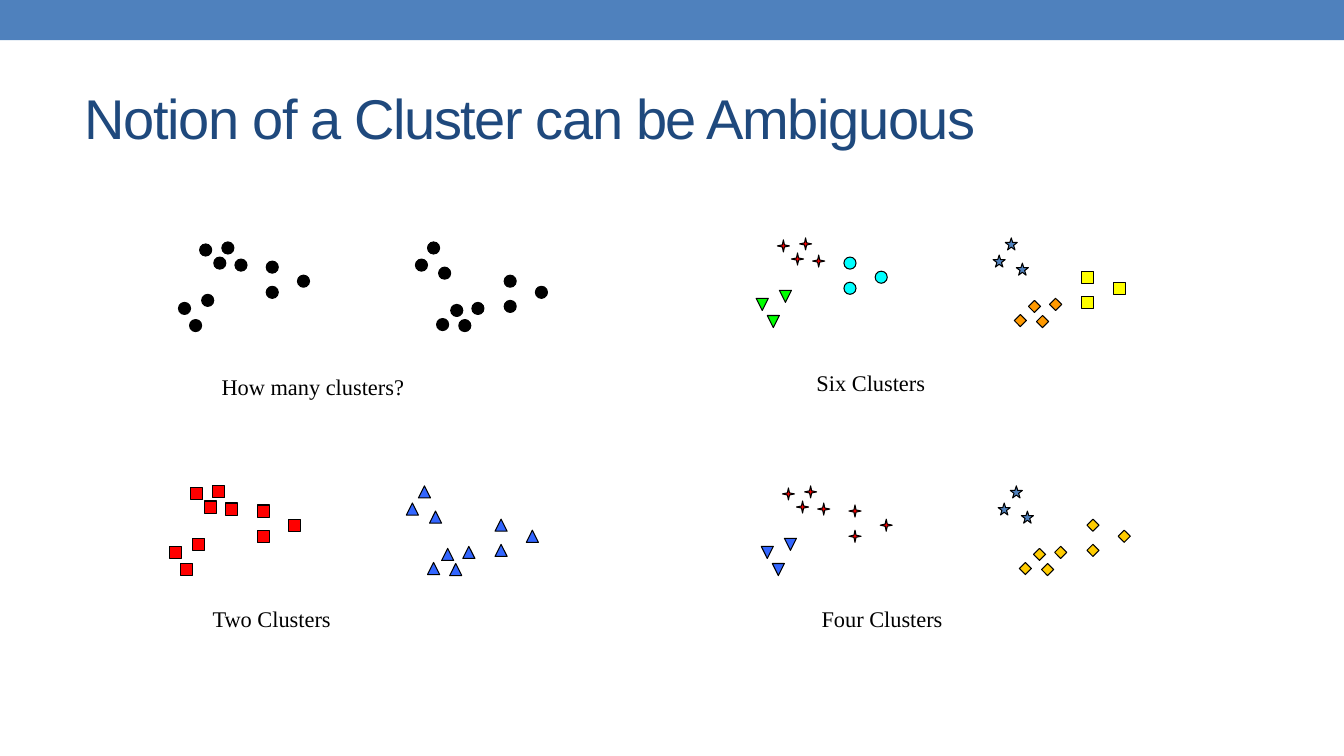
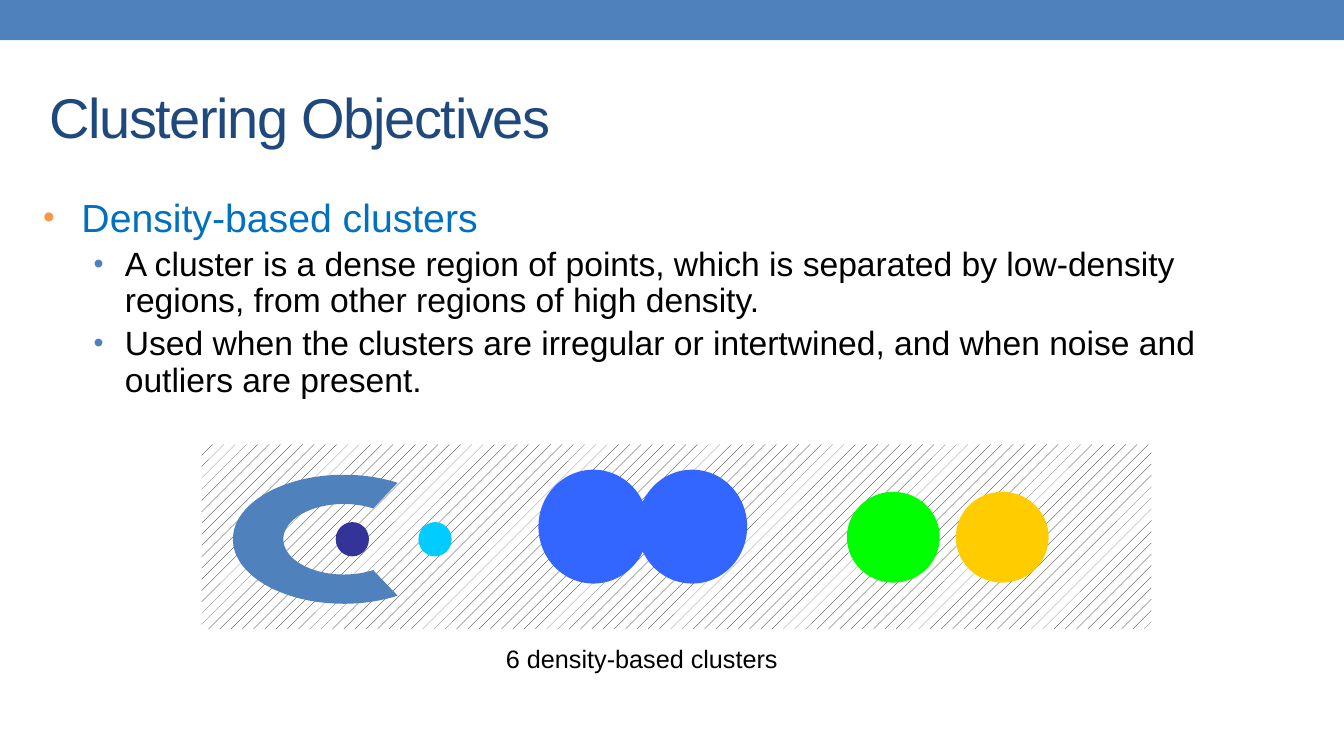
import math

import pptx
import pptx.dml.color
import pptx.enum.dml
import pptx.enum.shapes
import pptx.enum.text
import pptx.oxml.ns
import pptx.util
from lxml import etree

PX = 9144  # EMU per px, 100 px to the inch
SLIDE_WIDTH, SLIDE_HEIGHT = 1333, 750
TITLE_ONLY = 5
MARKER_SIZE = 12

RGB = pptx.dml.color.RGBColor
SHAPE = pptx.enum.shapes.MSO_SHAPE
qn = pptx.oxml.ns.qn

BLACK = RGB(0x00, 0x00, 0x00)
WHITE = RGB(0xFF, 0xFF, 0xFF)
STEEL = RGB(0x4F, 0x81, 0xBD)
NAVY = RGB(0x1F, 0x49, 0x7D)
HEADING = RGB(0x00, 0x70, 0xC0)
BULLET_ORANGE = RGB(0xF7, 0x96, 0x46)
RED = RGB(0xFF, 0x00, 0x00)
BLUE = RGB(0x33, 0x66, 0xFF)
GREEN = RGB(0x00, 0xFF, 0x00)
GOLD = RGB(0xFF, 0xCC, 0x00)
ORANGE = RGB(0xFF, 0x99, 0x00)
YELLOW = RGB(0xFF, 0xFF, 0x00)
CYAN = RGB(0x00, 0xFF, 0xFF)
SKY = RGB(0x00, 0xCC, 0xFF)
INDIGO = RGB(0x33, 0x33, 0x99)

# Marker positions of the point cloud, one row per neighbourhood.
NEIGHBOURHOODS = (
    ((233, 257), (198, 242), (220, 240), (212, 255)),
    ((200, 292), (177, 300), (188, 317)),
    ((264, 259), (295, 273), (264, 284)),
    ((435, 265), (412, 257), (424, 240)),
    ((468, 300), (433, 316), (455, 317), (447, 302)),
    ((500, 298), (531, 284), (500, 273)),
)

DOT = (SHAPE.OVAL, BLACK)
RED_SQUARE = (SHAPE.RECTANGLE, RED)
BLUE_TRIANGLE = (SHAPE.ISOSCELES_TRIANGLE, BLUE)
RED_SPARK = (SHAPE.STAR_4_POINT, RED)
STEEL_STAR = (SHAPE.STAR_5_POINT, STEEL)
GOLD_DIAMOND = (SHAPE.DIAMOND, GOLD)

# Caption, caption position, shift of the cloud, marker per neighbourhood.
PANELS = (
    ("How many clusters?", (210, 365), (0, 0), (DOT,) * 6),
    ("Four Clusters", (805, 595), (578, 242),
     (RED_SPARK, (SHAPE.FLOWCHART_MERGE, BLUE), RED_SPARK,
      STEEL_STAR, GOLD_DIAMOND, GOLD_DIAMOND)),
    ("Two Clusters", (201, 595), (-9, 242),
     (RED_SQUARE,) * 3 + (BLUE_TRIANGLE,) * 3),
    ("Six Clusters", (800, 361), (573, -4),
     (RED_SPARK, (SHAPE.FLOWCHART_MERGE, GREEN), (SHAPE.OVAL, CYAN),
      STEEL_STAR, (SHAPE.DIAMOND, ORANGE), (SHAPE.RECTANGLE, YELLOW))),
)

DENSITY_POINTS = (
    "A cluster is a dense region of points, which is separated by low-density "
    "regions, from other regions of high density.",
    "Used when the clusters are irregular or intertwined, and when noise and "
    "outliers are present.",
)


def emu(*lengths):
    return [pptx.util.Emu(round(length * PX)) for length in lengths]


class Deck:
    """Holds the shared style and the slide being built."""

    def __init__(self):
        self.presentation = pptx.Presentation()
        (self.presentation.slide_width,
         self.presentation.slide_height) = emu(SLIDE_WIDTH, SLIDE_HEIGHT)
        self.layout = self.presentation.slide_layouts[TITLE_ONLY]
        self.slide = None

    def start_slide(self, heading, box):
        first = self.slide is None
        self.slide = self.presentation.slides.add_slide(self.layout)
        if first:
            self.place_band()

        title = self.slide.shapes.title
        title.left, title.top, title.width, title.height = emu(*box)
        title.text_frame.word_wrap = True
        title.text_frame.vertical_anchor = pptx.enum.text.MSO_ANCHOR.MIDDLE
        paragraph = title.text_frame.paragraphs[0]
        paragraph.text = heading
        paragraph.alignment = pptx.enum.text.PP_ALIGN.LEFT
        self.style(paragraph, 40, NAVY)
        paragraph.runs[0]._r.get_or_add_rPr().set("spc", "-100")

    def place_band(self):
        """Put the top band on the layout, behind its placeholders."""
        band = self.shape(SHAPE.RECTANGLE, (0, 0, SLIDE_WIDTH, 40), STEEL)
        band.element.find(".//" + qn("p:cNvPr")).set("id", "20")
        self.layout.shapes.element.insert(2, band.element)

    def style(self, paragraph, size, color=BLACK, font="Arial"):
        paragraph.font.name = font
        paragraph.font.size = pptx.util.Pt(size)
        paragraph.font.color.rgb = color

    def finish(self, shape, color, outline=None):
        shape.shadow.inherit = False
        shape.fill.solid()
        shape.fill.fore_color.rgb = color
        if outline is None:
            shape.line.fill.background()
        else:
            shape.line.color.rgb = outline
            shape.line.width = pptx.util.Pt(0.75)
        return shape

    def shape(self, preset, box, color, outline=None, group=None):
        owner = group or self.slide
        return self.finish(owner.shapes.add_shape(preset, *emu(*box)),
                           color, outline)

    def text_frame(self, box, group=None):
        owner = group or self.slide
        frame = owner.shapes.add_textbox(*emu(*box)).text_frame
        frame.word_wrap = True
        return frame

    def caption(self, text, box, size, font="Arial", group=None):
        paragraph = self.text_frame(box, group).paragraphs[0]
        paragraph.text = text
        self.style(paragraph, size, font=font)

    def bullet(self, paragraph, text, size, color, bullet_color,
               indent, hanging, level=0):
        paragraph.text = text
        paragraph.level = level
        paragraph.line_spacing = 0.9
        paragraph.space_before = pptx.util.Pt(size * 0.2)
        properties = paragraph._p.get_or_add_pPr()
        left, first = emu(indent, -hanging)
        properties.set("marL", str(left))
        properties.set("indent", str(first))
        tint = etree.SubElement(properties, qn("a:buClr"))
        etree.SubElement(tint, qn("a:srgbClr"), val=str(bullet_color))
        etree.SubElement(properties, qn("a:buSzPct"), val="85000")
        etree.SubElement(properties, qn("a:buFont"), typeface="Arial")
        etree.SubElement(properties, qn("a:buChar"), char="•")
        self.style(paragraph, size, color)

    def panel(self, text, caption_at, shift, markers):
        """Draw the point cloud with one marker style per neighbourhood."""
        group = self.slide.shapes.add_group_shape()
        for points, (preset, color) in zip(NEIGHBOURHOODS, markers):
            for x, y in points:
                box = (x + shift[0], y + shift[1], MARKER_SIZE, MARKER_SIZE)
                self.shape(preset, box, color, BLACK, group)
        self.caption(text, (*caption_at, 250, 37), 16,
                     "Times New Roman", group)

    def crescent(self, center, outer, inner, opening, color):
        """Draw an elliptical ring open to the right by +/- opening degrees."""
        def point(radii, angle, reach=0.0):
            """Point on the ellipse, moved along its tangent by reach."""
            cos, sin = math.cos(angle), math.sin(angle)
            return emu(center[0] + radii[0] * (cos - reach * sin),
                       center[1] + radii[1] * (sin + reach * cos))

        angles = [math.radians(degrees) for degrees in
                  (opening, 90, 180, 270, 360 - opening)]
        sides = ((outer, angles), (inner, angles[::-1]))
        anchors = [point(radii, angle)
                   for radii, turn in sides for angle in turn]
        builder = self.slide.shapes.build_freeform(*anchors[0], scale=1.0)
        builder.add_line_segments(anchors[1:], close=True)
        ring = self.finish(builder.convert_to_shape(), color)

        edges = list(ring.element.iter(qn("a:lnTo")))
        for (radii, turn), start in zip(sides, (0, len(angles))):
            for edge, a, b in zip(edges[start:], turn, turn[1:]):
                reach = 4 / 3 * math.tan((b - a) / 4)
                edge.tag = qn("a:cubicBezTo")
                controls = (point(radii, a, reach), point(radii, b, -reach))
                for index, (x, y) in enumerate(controls):
                    control = etree.Element(qn("a:pt"), x=str(x - ring.left),
                                            y=str(y - ring.top))
                    edge.insert(index, control)


def ambiguity_slide(deck):
    deck.start_slide("Notion of a Cluster can be Ambiguous",
                     (74, 58, 906, 117))
    for panel in PANELS:
        deck.panel(*panel)


def density_slide(deck):
    deck.start_slide("Clustering Objectives", (39, 49, 906, 133))

    body = deck.text_frame((33, 192, 1225, 535))
    deck.bullet(body.paragraphs[0], "Density-based clusters", 28, HEADING,
                BULLET_ORANGE, 38, 38)
    for point in DENSITY_POINTS:
        deck.bullet(body.add_paragraph(), point, 24, BLACK, STEEL,
                    81, 31, level=1)

    noise = deck.shape(SHAPE.RECTANGLE, (200, 441, 942, 183), WHITE)
    noise.fill.patterned()
    noise.fill.pattern = pptx.enum.dml.MSO_PATTERN.PERCENT_10
    noise.fill.fore_color.rgb = BLACK
    noise.fill.back_color.rgb = WHITE

    deck.shape(SHAPE.OVAL, (333, 518, 33, 34), INDIGO)
    deck.crescent((341, 535), (110, 64), (60, 35), 61, STEEL)
    for box, color in (
        ((415, 518, 33, 34), SKY),
        ((840, 488, 92, 90), GREEN),
        ((948, 488, 92, 90), GOLD),
        ((534, 466, 109, 113), BLUE),
        ((632, 466, 109, 113), BLUE),
    ):
        deck.shape(SHAPE.OVAL, box, color)
    deck.caption("6 density-based clusters", (492, 633, 350, 40), 18)


def main():
    deck = Deck()
    ambiguity_slide(deck)
    density_slide(deck)
    deck.presentation.save("out.pptx")


if __name__ == "__main__":
    main()
